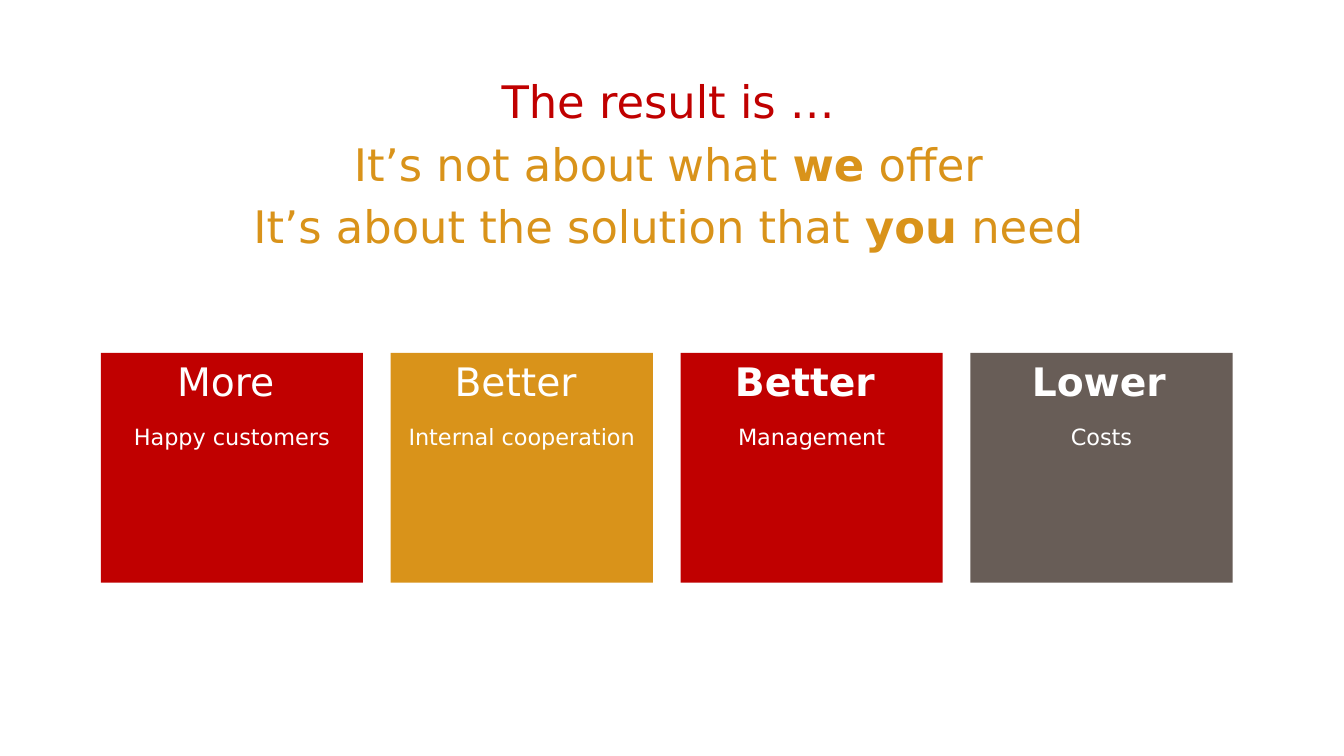
"""Build a slide with a three-line heading above four result cards."""
from dataclasses import dataclass

from pptx import Presentation
from pptx.dml.color import RGBColor
from pptx.enum.shapes import MSO_SHAPE
from pptx.enum.text import MSO_ANCHOR, MSO_AUTO_SIZE, PP_ALIGN
from pptx.util import Inches, Pt


@dataclass(frozen=True)
class Theme:
    font: str = "DejaVu Sans"
    red: str = "C00000"
    gold: str = "D9931A"
    grey: str = "685D57"
    white: str = "FFFFFF"
    heading: float = 32
    lead: float = 28
    detail: float = 16
    small: float = 11


theme = Theme()


def add_run(p, text, size, color, bold=False):
    p.alignment = PP_ALIGN.CENTER
    r = p.add_run()
    r.text = text
    r.font.name = theme.font
    r.font.size = Pt(size)
    r.font.bold = bold
    r.font.color.rgb = RGBColor.from_string(color)


prs = Presentation()
prs.slide_width, prs.slide_height = Inches(13.33), Inches(7.5)
s = prs.slides.add_slide(prs.slide_layouts[5])

title = s.shapes.title
title.left, title.top = Inches(1), Inches(0.68)
title.width, title.height = Inches(11.26), Inches(2.13)
tf = title.text_frame
tf.word_wrap = True
tf.auto_size = MSO_AUTO_SIZE.NONE
tf.vertical_anchor = MSO_ANCHOR.TOP

heading_lines = [
    (theme.red, [("The result is …", False)]),
    (theme.gold, [("It’s not about what ", False), ("we", True), (" offer", False)]),
    (theme.gold, [("It’s about the solution that ", False), ("you", True), (" need", False)]),
]
for i, (color, parts) in enumerate(heading_lines):
    p = tf.add_paragraph() if i else tf.paragraphs[0]
    p.space_before = Pt(6.4 if i else 0)
    for text, bold in parts:
        add_run(p, text, size=theme.heading, color=color, bold=bold)

cards = [
    (theme.red, [("More ", theme.lead)], "Happy customers", False),
    (theme.gold, [("Better ", theme.lead)], "Internal cooperation", False),
    (theme.red, [("Better ", theme.lead)], "Management", True),
    (theme.grey, [("Lower", theme.lead), (" ", theme.small)], "Costs", True),
]
for i, (fill, lead, detail, bold) in enumerate(cards):
    sp = s.shapes.add_shape(MSO_SHAPE.RECTANGLE, Inches(1 + i * 2.875), Inches(3.5),
                            Inches(2.6), Inches(2.28))
    sp.shadow.inherit = False
    sp.fill.solid()
    sp.fill.fore_color.rgb = RGBColor.from_string(fill)
    sp.line.fill.background()
    tf = sp.text_frame
    tf.word_wrap = True
    tf.vertical_anchor = MSO_ANCHOR.TOP
    for text, size in lead:
        add_run(tf.paragraphs[0], text, size=size, color=theme.white, bold=bold)
    p = tf.add_paragraph()
    p.space_before = Pt(13)
    add_run(p, detail, size=theme.detail, color=theme.white)

prs.save("out.pptx")
